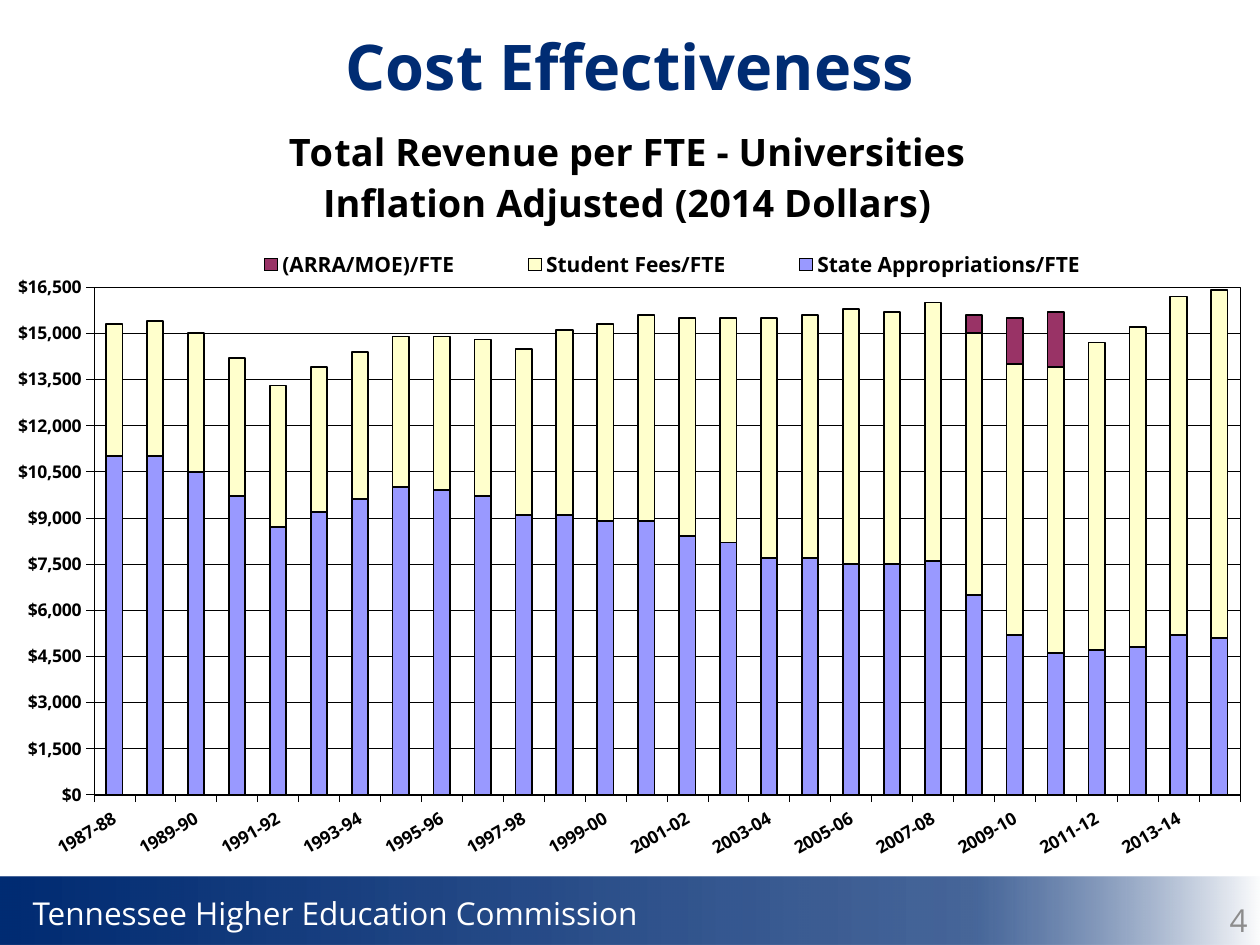
from dataclasses import dataclass

from lxml import etree
from pptx import Presentation, util as u
from pptx.chart import data as chart_data
from pptx.dml import color
from pptx.enum import chart as ch, shapes, text
from pptx.oxml import ns, parse_xml


@dataclass(frozen=True)
class Theme:
    font: str = "Open Sans"
    navy: str = "002C73"
    white: str = "FFFFFF"
    black: str = "000000"
    gray: str = "8C8C8C"
    series: tuple = ("9999FF", "FFFFCC", "993366")
    heading: float = 36
    chart_title: float = 21.6
    body: float = 18
    legend: float = 12
    axis: float = 10
    hairline: float = 0.25
    outline: float = 1


YEARS = [f"{year}-{(year + 1) % 100:02d}" for year in range(1987, 2015)]
REVENUE = {
    "State Appropriations/FTE": [
        11000, 11000, 10500, 9700, 8700, 9200, 9600, 10000, 9900, 9700, 9100, 9100, 8900, 8900,
        8400, 8200, 7700, 7700, 7500, 7500, 7600, 6500, 5200, 4600, 4700, 4800, 5200, 5100],
    "Student Fees/FTE": [
        4300, 4400, 4500, 4500, 4600, 4700, 4800, 4900, 5000, 5100, 5400, 6000, 6400, 6700,
        7100, 7300, 7800, 7900, 8300, 8200, 8400, 8500, 8800, 9300, 10000, 10400, 11000, 11300],
    "(ARRA/MOE)/FTE": [0] * 21 + [600, 1500, 1800] + [0] * 4,
}


def rgb(value):
    return color.RGBColor.from_string(value)


def assign(target, values):
    for name, value in values.items():
        setattr(target, name, value)


def layout(x, y, width=None, height=None, inner=False):
    parts = {"layoutTarget": "inner" if inner else None, "xMode": "edge", "yMode": "edge",
             "x": x, "y": y, "w": width, "h": height}
    root = etree.Element(ns.qn("c:layout"))
    manual = etree.SubElement(root, ns.qn("c:manualLayout"))
    for name, value in parts.items():
        if value is not None:
            etree.SubElement(manual, ns.qn(f"c:{name}")).set("val", str(value))
    return root


def place(parent, index, element):
    for old in parent.findall(ns.qn("c:layout")):
        parent.remove(old)
    parent.insert(index, element)


class SlideBuilder:
    """Draws styled elements on the current slide."""

    def __init__(self, page, theme):
        self.page, self.theme = page, theme

    def style(self, font, size, tint, bold=False):
        assign(font, {"name": self.theme.font, "size": u.Pt(size), "bold": bold})
        font.color.rgb = rgb(tint)

    def line(self, target, width):
        target.color.rgb = rgb(self.theme.black)
        target.width = u.Pt(width)

    def band(self, left, top, width, height):
        shape = self.page.shapes.add_shape(
            shapes.MSO_SHAPE.RECTANGLE, *map(u.Inches, (left, top, width, height)))
        shape.shadow.inherit = False
        shape.line.fill.background()
        shape.fill.gradient()
        shape.fill.gradient_angle = 0
        stops = shape._element.spPr.find(".//" + ns.qn("a:gsLst"))
        for stop in list(stops):
            stops.remove(stop)
        for position, tint, alpha in ((0, self.theme.navy, 100), (77, self.theme.navy, 72),
                                      (100, self.theme.white, 100)):
            stops.append(parse_xml(
                f'<a:gs {ns.nsdecls("a")} pos="{position * 1000}"><a:srgbClr val="{tint}">'
                f'<a:alpha val="{alpha * 1000}"/></a:srgbClr></a:gs>'))

    def label(self, content, at, size, tint, align="LEFT", bold=False, wrap=True):
        box = self.page.shapes.add_textbox(*map(u.Inches, at))
        box.text_frame.word_wrap = wrap
        para = box.text_frame.paragraphs[0]
        para.alignment = text.PP_ALIGN[align]
        span = para.add_run()
        span.text = content
        self.style(span.font, size, tint, bold)

    def stacked_chart(self, title_lines, years, revenue, at):
        theme = self.theme
        data = chart_data.CategoryChartData(number_format=r"\$#,##0")
        data.categories = years
        for name, values in revenue.items():
            data.add_series(name, values)
        chart = self.page.shapes.add_chart(
            ch.XL_CHART_TYPE.COLUMN_STACKED, *map(u.Inches, at), data).chart
        self.style(chart.font, theme.axis, theme.black)
        assign(chart.plots[0], {"gap_width": 150, "overlap": 100, "vary_by_categories": False})
        for series, tint in zip(chart.plots[0].series, theme.series):
            series.format.fill.solid()
            series.format.fill.fore_color.rgb = rgb(tint)
            self.line(series.format.line, theme.outline)
        self.chart_title(chart, title_lines)
        self.legend(chart)
        self.axes(chart)
        area = chart._chartSpace.chart.plotArea
        place(area, 0, layout(0.067, 0.24, 0.917, 0.667, inner=True))
        area.append(parse_xml(
            f'<c:spPr {ns.nsdecls("c", "a")}><a:noFill/><a:ln w="{u.Pt(theme.hairline)}">'
            f'<a:solidFill><a:srgbClr val="{theme.black}"/></a:solidFill></a:ln></c:spPr>'))

    def chart_title(self, chart, lines):
        chart.has_title = True
        frame = chart.chart_title.text_frame
        frame.text = "\n".join(lines)
        for para in frame.paragraphs:
            para.alignment = text.PP_ALIGN.CENTER
            for span in para.runs:
                self.style(span.font, self.theme.chart_title, self.theme.black, True)
        place(chart.chart_title._element, 1, layout(0.22, 0.02))

    def legend(self, chart):
        chart.has_legend = True
        assign(chart.legend, {"position": ch.XL_LEGEND_POSITION.RIGHT,
                              "include_in_layout": False})
        self.style(chart.legend.font, self.theme.legend, self.theme.black, True)
        place(chart.legend._element, 1, layout(0.15, 0.19, 0.76, 0.04))

    def axes(self, chart):
        theme = self.theme
        for axis in (chart.category_axis, chart.value_axis):
            assign(axis, {"major_tick_mark": ch.XL_TICK_MARK.OUTSIDE,
                          "minor_tick_mark": ch.XL_TICK_MARK.NONE})
            self.style(axis.tick_labels.font, theme.axis, theme.black, True)
            self.line(axis.format.line, theme.hairline)
        assign(chart.value_axis, {"minimum_scale": 0, "maximum_scale": 16500,
                                  "major_unit": 1500, "has_major_gridlines": True})
        assign(chart.value_axis.tick_labels, {"number_format": r"\$#,##0",
                                              "number_format_is_linked": False})
        self.line(chart.value_axis.major_gridlines.format.line, theme.hairline)
        category = chart.category_axis._element
        category.find(ns.qn("c:txPr")).find(ns.qn("a:bodyPr")).set("rot", str(-30 * 60000))
        for name, step in (("tickLblSkip", 2), ("tickMarkSkip", 1)):
            category.find(ns.qn("c:noMultiLvlLbl")).addprevious(
                parse_xml(f'<c:{name} {ns.nsdecls("c")} val="{step}"/>'))


def main():
    theme = Theme()
    deck = Presentation()
    assign(deck, {"slide_width": u.Inches(10), "slide_height": u.Inches(7.5)})
    slide = SlideBuilder(deck.slides.add_slide(deck.slide_layouts[6]), theme)
    slide.band(0, 6.96, 10.02, 0.54)
    slide.label("Tennessee Higher Education Commission", (0.16, 7.05, 5.05, 0.4),
                theme.body, theme.white, wrap=False)
    slide.label("Cost Effectiveness", (0, 0.17, 10, 0.71), theme.heading, theme.navy,
                align="CENTER", bold=True)
    slide.stacked_chart(("Total Revenue per FTE - Universities",
                         "Inflation Adjusted (2014 Dollars)"),
                        YEARS, REVENUE, (0.08, 0.83, 9.92, 6.04))
    slide.label("4", (7.67, 7.1, 2.33, 0.4), theme.body, theme.gray, align="RIGHT")
    deck.save("out.pptx")


if __name__ == "__main__":
    main()
